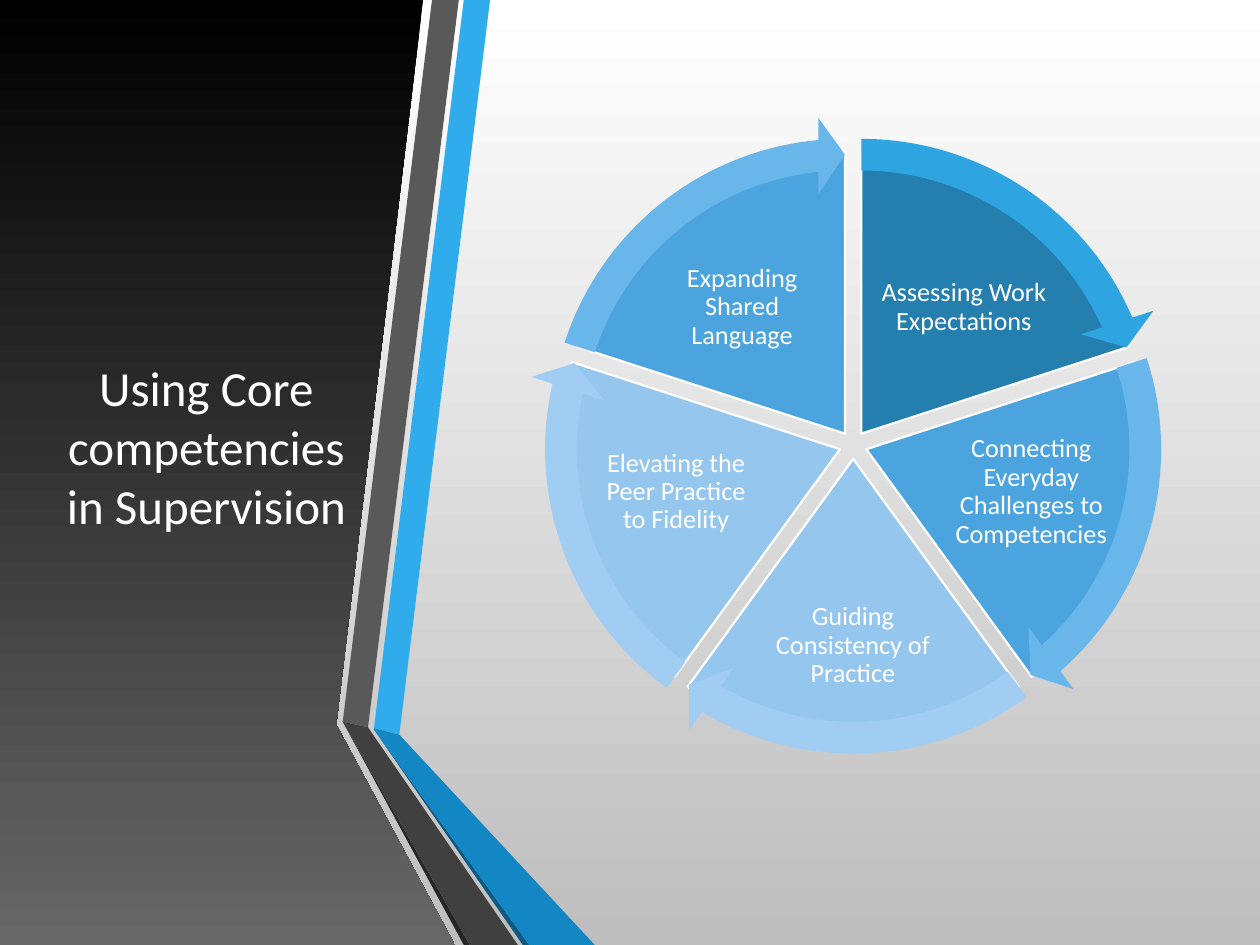
"""Build a slide with a dark title panel and a five-part wheel of supervision steps."""
from math import cos, radians, sin

from pptx import Presentation
from pptx.dml.color import RGBColor
from pptx.enum.shapes import MSO_SHAPE
from pptx.enum.text import MSO_ANCHOR, PP_ALIGN
from pptx.util import Cm, Pt

RECT, PIE, ARROW = MSO_SHAPE.RECTANGLE, MSO_SHAPE.PIE, MSO_SHAPE.CIRCULAR_ARROW
MIDDLE, CENTER = MSO_ANCHOR.MIDDLE, PP_ALIGN.CENTER
WHITE = "FFFFFF"
WIDE, HIGH = 25.4, 19.05


def paint(fill, *tones):
    if len(tones) == 1:
        fill.solid()
        fill.fore_color.rgb = RGBColor.from_string(tones[0])
        return
    fill.gradient()
    fill.gradient_angle = 270
    for stop, tone in zip(fill.gradient_stops, tones):
        stop.color.rgb = RGBColor.from_string(tone)


def write(text, box, size, frame_set, para_set):
    frame = shapes.add_textbox(*map(Cm, box)).text_frame
    para = frame.paragraphs[0]
    run = para.add_run()
    run.text = text
    font_set = {"name": "Calibri", "size": Pt(size)}
    for part, values in (
        (frame, {"word_wrap": True, "vertical_anchor": MIDDLE, **frame_set}),
        (para, {"alignment": CENTER, **para_set}),
        (run.font, font_set),
    ):
        for key, value in values.items():
            setattr(part, key, value)
    paint(run.font.fill, WHITE)


deck = Presentation()
deck.slide_width, deck.slide_height = Cm(WIDE), Cm(HIGH)
slide = deck.slides.add_slide(deck.slide_layouts[6])
shapes = slide.shapes

paint(slide.background.fill, WHITE, "BEBEBE")
back = shapes.add_shape(RECT, 0, 0, Cm(WIDE), Cm(HIGH))
back.shadow.inherit = False
back.line.fill.background()
paint(back.fill, WHITE, "BEBEBE")

bands = [
    (("000000", "676767"), [(6.71, 0), (8.53, 0), (6.78, 14.61), (9.17, HIGH), (0, HIGH), (0, 0)]),
    (("30ACEC",), [(7.54, 14.68), (8.05, 14.81), (9.88, 0), (9.35, 0)]),
    (("595959",), [(9.25, 0), (8.71, 0), (6.91, 14.55), (7.42, 14.66)]),
    (("262626",), [(6.91, 14.55), (9.35, HIGH), (9.47, HIGH)]),
    (("0C5A82",), [(7.54, 14.71), (10.54, HIGH), (10.67, HIGH)]),
    (("1287C3",), [(7.54, 14.71), (10.67, HIGH), (11.99, HIGH), (8.05, 14.81), (7.54, 14.68)]),
    (("404040",), [(10.44, HIGH), (7.52, 14.81), (7.42, 14.66), (6.91, 14.55), (9.47, HIGH)]),
]
for tones, points in bands:
    spots = [(Cm(x), Cm(y)) for x, y in points]
    pen = shapes.build_freeform(*spots[0])
    pen.add_line_segments(spots[1:], close=True)
    band = pen.convert_to_shape()
    band.shadow.inherit = False
    band.line.fill.background()
    paint(band.fill, *tones)

write("Using Core competencies in Supervision", (0.86, 1.91, 6.6, 14.17), 28, {}, {})

steps = [
    ("Assessing Work Expectations", (17.6, 4.98, 3.66, 2.44), "247FAF", "2EA4E1"),
    ("Connecting Everyday Challenges to Competencies", (19.1, 8.56, 3.38, 2.72), "4CA4DE", "68B6EA"),
    ("Guiding Consistency of Practice", (15.57, 11.53, 3.25, 2.97), "95C6EE", "A2CDF2"),
    ("Elevating the Peer Practice to Fidelity", (11.94, 8.56, 3.38, 2.72), "95C6EE", "A2CDF2"),
    ("Expanding Shared Language", (13.13, 4.98, 3.66, 2.44), "4CA4DE", "68B6EA"),
]
mid_x, mid_y, gap = 17.2, 8.97, 0.28
turn = 216
sweep = turn / len(steps)
inset = {f"margin_{side}": Cm(0.05) for side in ("left", "top", "right", "bottom")}

for kind, size in ((PIE, 11.35), (ARROW, 12.78)):
    for i, (text, box, tone, rim) in enumerate(steps):
        start = (162 + i * sweep) % turn
        end = (start + sweep) % turn
        way = radians((start + sweep / 2) * 360 / turn)
        left = mid_x + gap * cos(way) - size / 2
        top = mid_y + gap * sin(way) - size / 2
        part = shapes.add_shape(kind, Cm(left), Cm(top), Cm(size), Cm(size))
        part.shadow.inherit = False
        angles = (start, end) if kind == PIE else (0.05, 3.28, end - 3.28, start, 0.06)
        for n, angle in enumerate(angles):
            part.adjustments[n] = angle
        if kind == PIE:
            paint(part.fill, tone)
            paint(part.line.fill, WHITE)
            part.line.width = Pt(1.25)
            write(text, box, 15, inset, {"line_spacing": 0.9})
        else:
            paint(part.fill, rim)
            part.line.fill.background()

deck.save("out.pptx")
